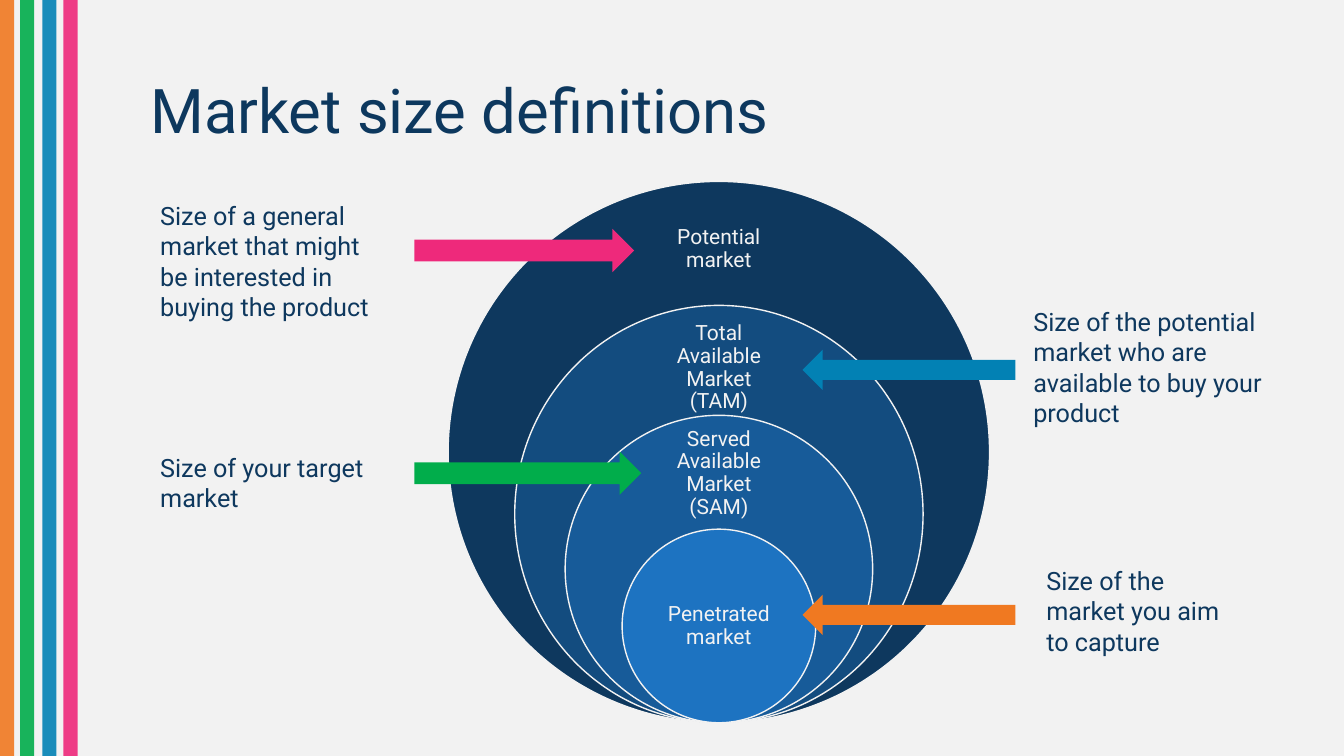
from lxml import etree
from pptx import Presentation
from pptx.dml.color import RGBColor
from pptx.enum import shapes as sh, text as tx
from pptx.oxml import ns
from pptx.util import Inches, Pt

FONT = "Roboto"
PALE = RGBColor(0xF2, 0xF2, 0xF2)
NAVY = RGBColor(0x0E, 0x38, 0x5E)
TITLE = RGBColor(0x0D, 0x38, 0x5E)
DEEP = RGBColor(0x13, 0x4C, 0x7F)
MID = RGBColor(0x17, 0x5B, 0x99)
BRIGHT = RGBColor(0x1D, 0x73, 0xC1)
ORANGE = RGBColor(0xF0, 0x79, 0x21)
GREEN = RGBColor(0x01, 0xAD, 0x4B)
BLUE = RGBColor(0x02, 0x81, 0xB4)
PINK = RGBColor(0xEE, 0x29, 0x7B)

RECT = sh.MSO_SHAPE.RECTANGLE
OVAL = sh.MSO_SHAPE.OVAL
RIGHT = sh.MSO_SHAPE.RIGHT_ARROW
LEFT = sh.MSO_SHAPE.LEFT_ARROW

HEAD = "Market size definitions"
STRIPES = [(0, ORANGE), (0.2, GREEN), (0.42, BLUE), (0.63, PINK)]
CENTER, BASE = 7.13, 7.17
RINGS = [
    ("Potential market", 5.37, 5.37, NAVY, (2.07, 1.5, 0.81)),
    ("Total Available Market (TAM)", 4.05, 4.14, DEEP, (3.28, 1.41, 0.74)),
    ("Served Available Market (SAM)", 3.05, 3.05, MID, (4.35, 1.42, 0.69)),
    ("Penetrated market", 1.92, 1.92, BRIGHT, (5.73, 1.36, 0.96)),
]
NOTES = [
    ("Size of a general market that might be interested in buying the product",
     (1.49, 1.94, 2.28, 1.31)),
    ("Size of the potential market who are available to buy your product",
     (10.15, 2.99, 2.52, 1.31)),
    ("Size of your target market", (1.49, 4.44, 2.52, 0.71)),
    ("Size of the market you aim to capture", (10.28, 5.56, 2.14, 1.01)),
]
ARROWS = [
    (RIGHT, (4.11, 2.27, 2.18, 0.43), PINK),
    (LEFT, (7.96, 3.47, 2.11, 0.4), BLUE),
    (RIGHT, (4.11, 4.48, 2.25, 0.43), GREEN),
    (LEFT, (7.96, 5.9, 2.11, 0.4), ORANGE),
]


def add_form(slide, kind, box, color, edge=None):
    form = slide.shapes.add_shape(kind, *map(Inches, box))
    form.shadow.inherit = False
    form.fill.solid()
    form.fill.fore_color.rgb = color
    if edge is None:
        form.line.fill.background()
    else:
        form.line.color.rgb = edge
        form.line.width = Pt(1)
    return form


def set_text(frame, words, size, color, align=tx.PP_ALIGN.LEFT):
    frame.word_wrap = True
    frame.text = words
    para = frame.paragraphs[0]
    para.alignment = align
    para.font.name = FONT
    para.font.size = Pt(size)
    para.font.color.rgb = color
    return para


def add_label(slide, words, box):
    frame = slide.shapes.add_textbox(*map(Inches, box)).text_frame
    frame.margin_left = frame.margin_right = Inches(0.12)
    frame.margin_top = frame.margin_bottom = Inches(0.12)
    frame.vertical_anchor = tx.MSO_ANCHOR.MIDDLE
    para = set_text(frame, words, 15, PALE, tx.PP_ALIGN.CENTER)
    para.line_spacing = 0.9


def main():
    deck = Presentation()
    deck.slide_width, deck.slide_height = Inches(13.33), Inches(7.5)
    slide = deck.slides.add_slide(deck.slide_layouts[5])
    slide.background.fill.solid()
    slide.background.fill.fore_color.rgb = PALE

    for left, color in STRIPES:
        stripe = add_form(slide, RECT, (left, 0, 0.14, 7.5), color)
        tint = stripe.fill._xPr.find(".//" + ns.qn("a:srgbClr"))
        etree.SubElement(tint, ns.qn("a:alpha"), val="90000")

    for words, wide, high, color, (top, span, tall) in RINGS:
        box = (CENTER - wide / 2, BASE - high, wide, high)
        add_form(slide, OVAL, box, color, PALE)
        add_label(slide, words, (CENTER - span / 2, top, span, tall))

    for words, box in NOTES:
        frame = slide.shapes.add_textbox(*map(Inches, box)).text_frame
        set_text(frame, words, 18, NAVY)
        frame.auto_size = tx.MSO_AUTO_SIZE.SHAPE_TO_FIT_TEXT

    title = slide.shapes.title
    title.left, title.top = Inches(1.39), Inches(0.4)
    title.width, title.height = Inches(8.76), Inches(1.45)
    title.text_frame.vertical_anchor = tx.MSO_ANCHOR.MIDDLE
    title.text_frame.auto_size = tx.MSO_AUTO_SIZE.NONE
    set_text(title.text_frame, HEAD, 44, TITLE).line_spacing = 0.9

    for kind, box, color in ARROWS:
        add_form(slide, kind, box, color)

    deck.save("out.pptx")


if __name__ == "__main__":
    main()
